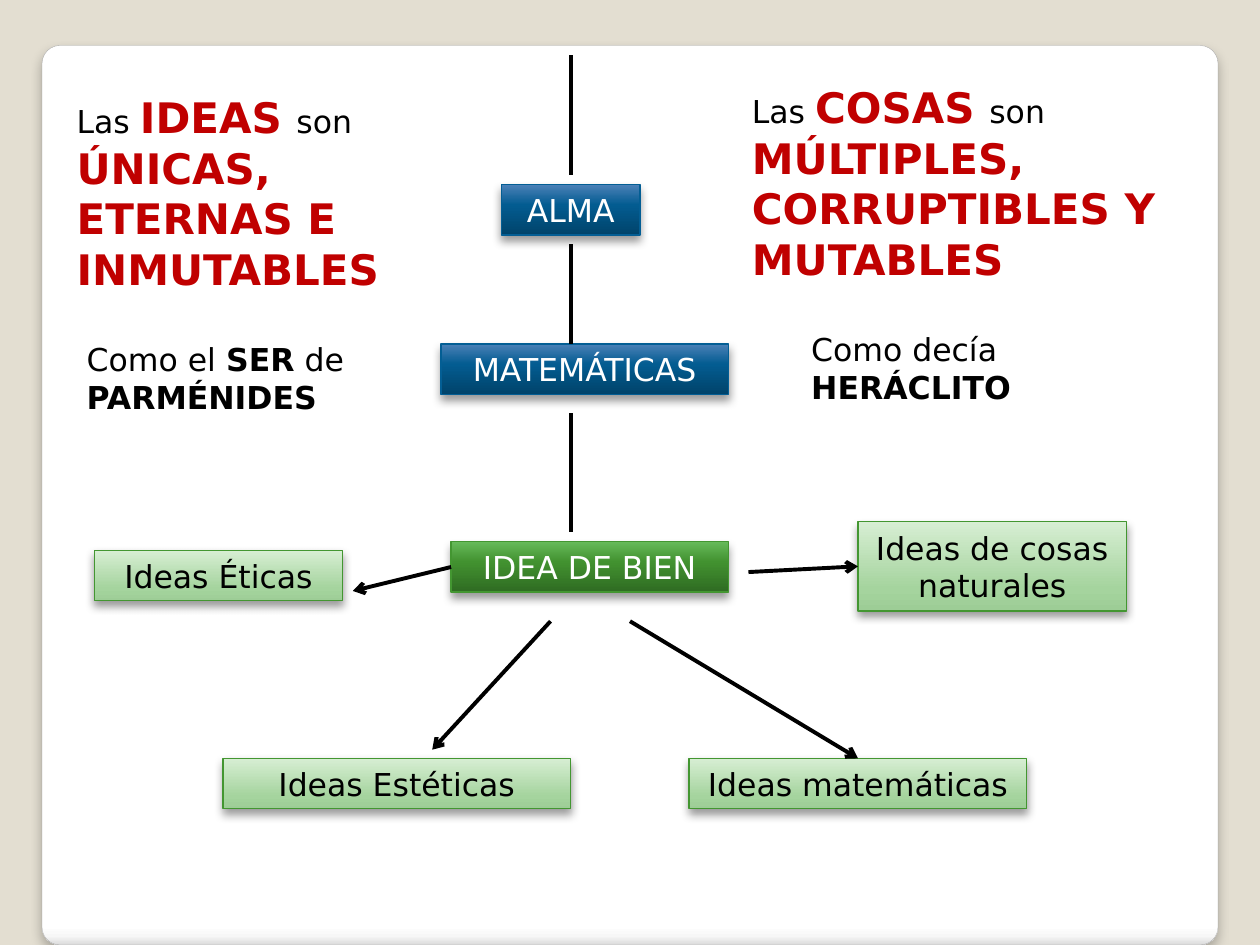
import pptx
import pptx.dml.color
import pptx.enum.shapes
import pptx.enum.text
import pptx.oxml.ns
import pptx.oxml.xmlchemy
import pptx.util
from lxml import etree

Pt = pptx.util.Pt
RGBColor = pptx.dml.color.RGBColor
SHAPE = pptx.enum.shapes.MSO_SHAPE
CENTER = pptx.enum.text.PP_ALIGN.CENTER
qn = pptx.oxml.ns.qn

BACKDROP = RGBColor(0xE3, 0xDE, 0xD1)
BLACK = RGBColor(0, 0, 0)
WHITE = RGBColor(0xFF, 0xFF, 0xFF)
RED = RGBColor(0xC0, 0, 0)
PANEL_EDGE = RGBColor(0xA4, 0xA4, 0xA4)
BLUE_EDGE = RGBColor(0x03, 0x5E, 0x94)
GREEN_EDGE = RGBColor(0x43, 0x96, 0x31)

# Gradient stops: (percent, colour)
PANEL_STOPS = [(0, WHITE), (98, WHITE), (99, RGBColor(0xF7, 0xF7, 0xF7)),
               (100, RGBColor(0xDA, 0xDA, 0xDA))]
BLUE_STOPS = [(0, RGBColor(0x00, 0x43, 0x6A)), (60, RGBColor(0x03, 0x5C, 0x91)),
              (100, RGBColor(0x4A, 0x80, 0xB7))]
GREEN_STOPS = [(0, RGBColor(0x2F, 0x6B, 0x22)), (60, RGBColor(0x42, 0x92, 0x30)),
               (100, RGBColor(0x66, 0xB9, 0x59))]
PALE_STOPS = [(0, RGBColor(0x9D, 0xCD, 0x96)), (25, RGBColor(0xA5, 0xD4, 0x9E)),
              (100, RGBColor(0xD7, 0xEE, 0xD3))]

BLUE = {"stops": BLUE_STOPS, "edge": BLUE_EDGE, "ink": WHITE}
GREEN = {"stops": GREEN_STOPS, "edge": GREEN_EDGE, "ink": WHITE}
PALE = {"stops": PALE_STOPS, "edge": GREEN_EDGE, "ink": BLACK}

BOXES = {
    "ALMA": (BLUE, 286.6, 105.6, 79.2, 28.8),
    "MATEMÁTICAS": (BLUE, 252, 196.6, 164.2, 28.8),
    "IDEA DE BIEN": (GREEN, 257.8, 309.6, 158.4, 28.8),
    "Ideas de cosas naturales": (PALE, 490.3, 298.1, 153.4, 51.1),
    "Ideas matemáticas": (PALE, 393.8, 433.4, 193, 28.8),
    "Ideas Estéticas": (PALE, 127.4, 433.4, 198.7, 28.8),
    "Ideas Éticas": (PALE, 54, 314.6, 141.8, 28.8),
}

PLAIN = {"size": Pt(18), "bold": False}
STRONG = {"size": Pt(18), "bold": True}
RED_STRONG = {"size": Pt(24), "bold": True, "color": RED}

NOTES = [
    ((36.7, 49, 249.1, 123.8),
     [("Las ", PLAIN), ("IDEAS ", RED_STRONG), ("son ", PLAIN),
      ("ÚNICAS, ETERNAS E INMUTABLES", RED_STRONG)]),
    ((422.6, 43.2, 254.9, 123.8),
     [("Las ", PLAIN), ("COSAS ", RED_STRONG), ("son ", PLAIN),
      ("MÚLTIPLES, CORRUPTIBLES Y MUTABLES", RED_STRONG)]),
    ((42.5, 190.8, 175.7, 51.1),
     [("Como el ", PLAIN), ("SER", STRONG), (" de ", PLAIN), ("PARMÉNIDES", STRONG)]),
    ((456.5, 185, 175.7, 51.1),
     [("Como decía ", PLAIN), ("HERÁCLITO", STRONG)]),
]

AXIS_X = 326.2
AXIS_SPANS = [(31.7, 100.1), (139.7, 196.6), (236.2, 303.8)]


def write_spans(para, spans):
    for text, look in spans:
        span = para.add_run()
        span.text = text
        look = {"name": "DejaVu Sans", "color": BLACK, **look}
        for key, value in look.items():
            if key == "color":
                span.font.color.rgb = value
            else:
                setattr(span.font, key, value)


def paint_gradient(shape, stops, angle):
    shape.fill.gradient()
    shape.fill.gradient_angle = angle
    stop_list = shape._element.spPr.find(qn("a:gradFill")).find(qn("a:gsLst"))
    for stop in list(stop_list):
        stop_list.remove(stop)
    for percent, color in stops:
        stop = etree.SubElement(stop_list, qn("a:gs"), pos=str(percent * 1000))
        etree.SubElement(stop, qn("a:srgbClr"), val=str(color))


def cast_shadow(shape, opacity, blur, distance):
    """Drop a black shadow straight down."""
    shape.shadow.inherit = False
    effects = shape._element.spPr.find(qn("a:effectLst"))
    shadow = etree.SubElement(
        effects, qn("a:outerShdw"), blurRad=str(Pt(blur)), dist=str(Pt(distance)),
        dir="5400000", algn="ctr", rotWithShape="0")
    color = etree.SubElement(shadow, qn("a:srgbClr"), val=str(BLACK))
    etree.SubElement(color, qn("a:alpha"), val=str(opacity * 1000))


def add_panel(page):
    panel = page.shapes.add_shape(
        SHAPE.ROUNDED_RECTANGLE, Pt(24), Pt(26), Pt(672), Pt(514))
    panel.adjustments[0] = 0.02
    paint_gradient(panel, PANEL_STOPS, 270)
    panel.line.color.rgb = PANEL_EDGE
    panel.line.width = Pt(0.16)
    cast_shadow(panel, 25, 6, 4)


def add_note(page, place, spans):
    box = page.shapes.add_textbox(*map(Pt, place))
    box.text_frame.word_wrap = True
    write_spans(box.text_frame.paragraphs[0], spans)


def add_box(page, text, style, *place):
    box = page.shapes.add_shape(SHAPE.RECTANGLE, *map(Pt, place))
    paint_gradient(box, style["stops"], 90)
    box.line.color.rgb = style["edge"]
    box.line.width = Pt(0.75)
    cast_shadow(box, 40, 5.2, 3)
    box.text_frame.word_wrap = True
    para = box.text_frame.paragraphs[0]
    para.alignment = CENTER
    write_spans(para, [(text, {**PLAIN, "color": style["ink"]})])
    return box


def add_line(page, start, end, arrow=False):
    line = page.shapes.add_connector(
        pptx.enum.shapes.MSO_CONNECTOR.STRAIGHT, *map(Pt, (*start, *end)))
    line.line.color.rgb = BLACK
    line.line.width = Pt(2.25)
    if arrow:
        etree.SubElement(line.line._get_or_add_ln(), qn("a:tailEnd"), type="arrow")
    etree.SubElement(line._element.spPr, qn("a:effectLst"))
    return line


def main():
    deck = pptx.Presentation()
    deck.slide_width, deck.slide_height = Pt(720), Pt(540)
    page = deck.slides.add_slide(deck.slide_layouts[6])
    page.background.fill.solid()
    page.background.fill.fore_color.rgb = BACKDROP

    add_panel(page)
    for place, spans in NOTES:
        add_note(page, place, spans)
    boxes = {text: add_box(page, text, *look) for text, look in BOXES.items()}

    for top, bottom in AXIS_SPANS:
        add_line(page, (AXIS_X, top), (AXIS_X, bottom))
    to_natural = add_line(page, (427.7, 326.9), (490.3, 323.6), arrow=True)
    to_natural.end_connect(boxes["Ideas de cosas naturales"], 1)
    to_ethical = add_line(page, (257.8, 324), (201.6, 337.7), arrow=True)
    to_ethical.begin_connect(boxes["IDEA DE BIEN"], 1)
    to_mathematical = add_line(page, (360, 355), (490.3, 433.4), arrow=True)
    to_mathematical.end_connect(boxes["Ideas matemáticas"], 0)
    add_line(page, (314.6, 355), (247, 428.4), arrow=True)

    deck.save("out.pptx")


if __name__ == "__main__":
    main()
